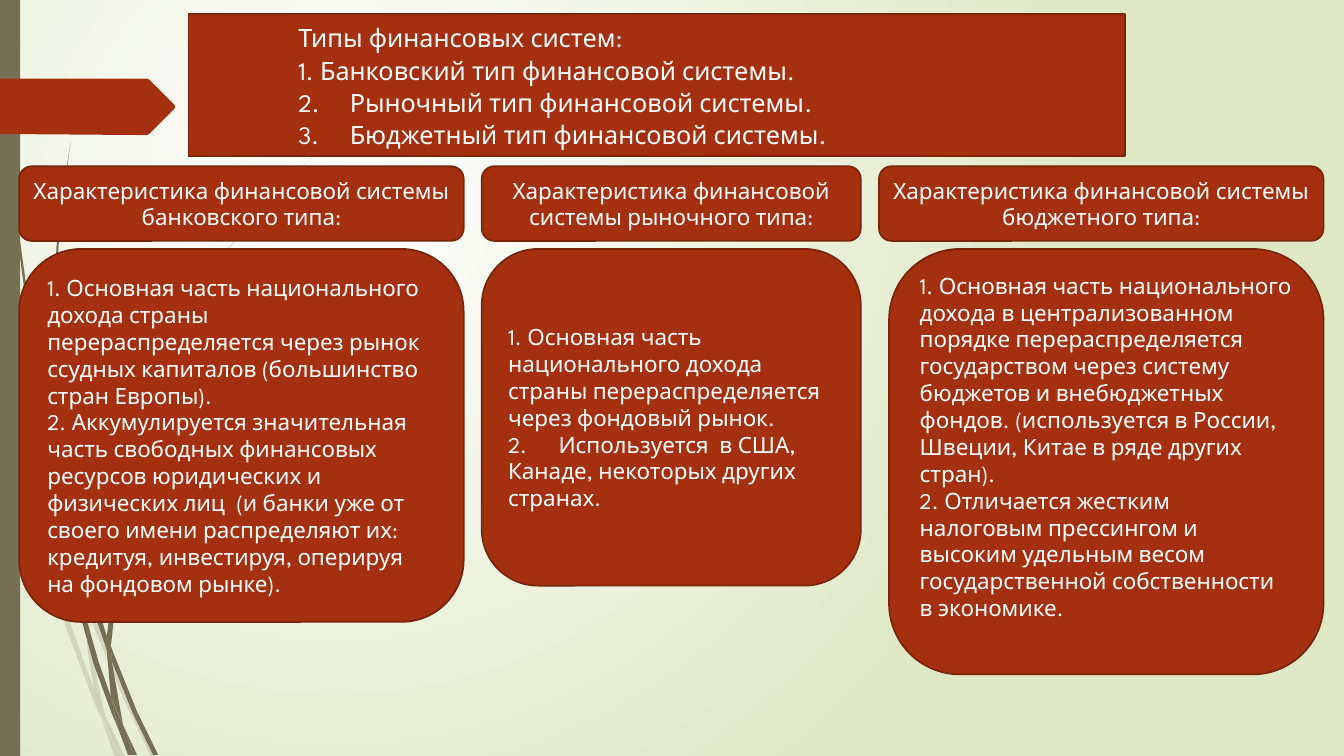
"""Build a slide that compares three types of financial system."""
from dataclasses import dataclass

from lxml import etree
from pptx import Presentation
from pptx.dml.color import RGBColor
from pptx.enum.shapes import MSO_SHAPE
from pptx.enum.text import MSO_ANCHOR, MSO_AUTO_SIZE, PP_ALIGN
from pptx.oxml import parse_xml
from pptx.oxml.ns import nsdecls, qn
from pptx.util import Pt

ROUNDED, RECTANGLE = MSO_SHAPE.ROUNDED_RECTANGLE, MSO_SHAPE.RECTANGLE
LEFT, CENTER, JUSTIFY = PP_ALIGN.LEFT, PP_ALIGN.CENTER, PP_ALIGN.JUSTIFY
MIDDLE, NO_FIT = MSO_ANCHOR.MIDDLE, MSO_AUTO_SIZE.NONE

TITLE = [
    "Типы финансовых систем:",
    "1. Банковский тип финансовой системы.",
    "2.\tРыночный тип финансовой системы.",
    "3.\tБюджетный тип финансовой системы.",
]
COLUMNS = [
    dict(
        left=13.68, width=317.52, body_width=317.52, body_height=266.4, spare=0,
        head="Характеристика финансовой системы банковского типа:",
        body=[
            "1. Основная часть национального дохода страны перераспределяется через рынок "
            "ссудных капиталов (большинство стран Европы).",
            "2. Аккумулируется значительная часть свободных финансовых ресурсов юридических и "
            "физических лиц  (и банки уже от своего имени распределяют их: кредитуя, "
            "инвестируя, оперируя на фондовом рынке).",
        ],
    ),
    dict(
        left=344.16, width=270.72, body_width=270.72, body_height=240.48, spare=0,
        head="Характеристика финансовой системы рыночного типа:",
        body=[
            "1. Основная часть национального дохода страны перераспределяется через "
            "фондовый рынок.",
            "2.\tИспользуется  в США, Канаде, некоторых других странах.",
        ],
    ),
    dict(
        left=627.84, width=317.52, body_width=310.32, body_height=303.84, spare=21.6,
        head="Характеристика финансовой системы бюджетного типа:",
        body=[
            "1. Основная часть национального дохода в централизованном порядке "
            "перераспределяется государством через систему бюджетов и внебюджетных фондов. "
            "(используется в России, Швеции, Китае в ряде других стран).",
            "2. Отличается жестким налоговым прессингом и высоким удельным весом "
            "государственной собственности в экономике.",
        ],
    ),
]

GRID = 0.72
PALE_STEMS = [
    [(11, 350), (9, 322), (0, 282), (0, 299), (10, 344)],
    [(58, 522), (84, 599), (85, 586), (62, 520), (36, 434), (14, 345), (17, 376), (36, 450)],
    [(92, 607), (88, 596), (88, 610), (123, 694), (150, 751), (155, 751), (127, 692)],
    [(119, 751), (124, 751), (105, 711)],
    [(93, 683), (70, 619), (48, 546), (31, 469), (17, 376), (11, 350), (28, 470), (44, 546),
     (65, 621), (92, 693), (101, 714), (99, 707)],
    [(84, 599), (87, 646), (93, 683), (96, 692), (105, 711), (103, 706), (91, 646), (88, 610)],
    [(88, 584), (97, 510), (110, 462), (133, 404), (160, 349), (193, 295), (229, 245),
     (268, 198), (312, 154), (312, 153), (268, 197), (228, 244), (191, 294), (158, 348),
     (130, 403), (107, 461), (93, 510), (85, 584), (88, 596)],
    [(101, 714), (114, 751), (119, 751)],
    [(96, 692), (93, 683), (99, 707), (119, 751), (105, 711)],
]
DARK_STEMS = [
    [(7, 110), (17, 233), (33, 355), (56, 477), (57, 481), (55, 453), (36, 355), (19, 232),
     (8, 109), (5, 48), (4, 0), (3, 0), (4, 48)],
    [(88, 592), (106, 645), (106, 631), (93, 590), (75, 532), (60, 472), (64, 505)],
    [(113, 649), (110, 641), (111, 656), (132, 708), (152, 749), (157, 749), (136, 706)],
    [(110, 691), (98, 657), (84, 608), (72, 556), (64, 505), (57, 477), (68, 557), (79, 608),
     (93, 659), (111, 708), (117, 722)],
    [(60, 472), (58, 453), (54, 349), (58, 245), (63, 193), (70, 141), (62, 193), (56, 245),
     (52, 349), (55, 449)],
    [(133, 749), (136, 749), (122, 719)],
    [(111, 633), (115, 592), (125, 552), (140, 513), (158, 476), (180, 440), (205, 406),
     (231, 374), (261, 344), (260, 344), (231, 373), (204, 405), (178, 439), (156, 474),
     (137, 512), (122, 551), (111, 591), (106, 631), (110, 641)],
    [(117, 722), (127, 749), (131, 749)],
    [(106, 645), (110, 691), (122, 719), (111, 656)],
    [(106, 645), (111, 656), (110, 641), (106, 631)],
    [(116, 706), (110, 691), (117, 722), (130, 749), (133, 749), (122, 719)],
]
POINTER = [(0, 78), (146, 78), (148, 79), (173, 104), (174, 106), (173, 108), (148, 133),
           (146, 134), (136, 134), (0, 133)]


@dataclass(frozen=True)
class Theme:
    """Colours, font and type sizes of the slide."""
    rust: str = "A53010"
    edge: str = "7A240C"
    olive: str = "766F54"
    white: str = "FFFFFF"
    lime: str = "DFE8C4"
    font: str = "League Spartan"
    title_size: int = 18
    text_size: int = 16
    edge_width: float = 1.25


THEME = Theme()


def paint(shape, colour, edge=None, opacity=None):
    """Give a shape its fill, outline and opacity."""
    shape.fill.solid()
    shape.fill.fore_color.rgb = RGBColor.from_string(colour)
    if edge:
        shape.line.color.rgb = RGBColor.from_string(edge)
        shape.line.width = Pt(THEME.edge_width)
    else:
        shape.line.fill.background()
    if opacity:
        tint = shape.fill._xPr.find(qn("a:solidFill"))[0]
        etree.SubElement(tint, qn("a:alpha")).set("val", str(opacity * 1000))


def write(box, lines, size=THEME.text_size, align=LEFT, tab=36, margin=0, indent=0,
          spacing=1.0, spare=0):
    """Fill a box with paragraphs in one format."""
    frame = box.text_frame
    frame.word_wrap, frame.auto_size, frame.vertical_anchor = True, NO_FIT, MIDDLE
    frame.margin_bottom = Pt(3.6 + spare)
    for number, line in enumerate(lines):
        para = frame.add_paragraph() if number else frame.paragraphs[0]
        para.alignment, para.line_spacing = align, spacing
        para.space_before = para.space_after = Pt(0)
        settings = para._p.get_or_add_pPr()
        settings.set("marL", str(Pt(margin)))
        settings.set("indent", str(Pt(indent)))
        if "\t" in line:
            stops = etree.SubElement(settings, qn("a:tabLst"))
            etree.SubElement(stops, qn("a:tab"), pos=str(Pt(tab)), algn="l")
        span = para.add_run()
        span.text = line
        span.font.size, span.font.name, span.font.bold = Pt(size), THEME.font, False
        span.font.color.rgb = RGBColor.from_string(THEME.white)


def add_box(page, kind, left, top, width, height, colour=THEME.rust, edge=THEME.edge):
    """Add a painted preset shape."""
    box = page.shapes.add_shape(kind, Pt(left), Pt(top), Pt(width), Pt(height))
    box.shadow.inherit = False
    paint(box, colour, edge)
    return box


def add_outline(page, points, colour, opacity=None):
    """Add a closed outline through points on the drawing grid."""
    builder = page.shapes.build_freeform(*points[0], scale=Pt(GRID))
    builder.add_line_segments(points[1:], close=True)
    outline = builder.convert_to_shape()
    outline.shadow.inherit = False
    paint(outline, colour, opacity=opacity)


def add_background(page):
    """Lay a radial gradient behind the page."""
    page.background.fill.solid()
    holder = page._element.cSld.find(qn("p:bg"))[0]
    stops = "".join(f'<a:gs pos="{place}"><a:srgbClr val="{colour}"/></a:gs>'
                    for place, colour in ((0, THEME.white), (100000, THEME.lime)))
    holder.replace(holder[0], parse_xml(
        f'<a:gradFill {nsdecls("a")} rotWithShape="1"><a:gsLst>{stops}</a:gsLst>'
        '<a:path path="circle"><a:fillToRect l="50000" t="50000" r="100000" b="100000"/>'
        '</a:path></a:gradFill>'))


def add_title(page):
    """Shape the title placeholder and bring it forward."""
    title = page.shapes.title
    title.left, title.top, title.width, title.height = map(Pt, (134.64, 10.08, 668.88, 101.52))
    title._element.spPr.append(parse_xml(
        f'<a:prstGeom {nsdecls("a")} prst="round2DiagRect"><a:avLst/></a:prstGeom>'))
    paint(title, THEME.rust, THEME.edge)
    write(title, TITLE, size=THEME.title_size, align=JUSTIFY, tab=108, margin=36,
          indent=35.28, spacing=1.07)
    page.shapes._spTree.append(title._element)


def main():
    """Assemble and save the deck."""
    deck = Presentation()
    deck.slide_width, deck.slide_height = Pt(960), Pt(540)
    page = deck.slides.add_slide(deck.slide_layouts[5])
    add_background(page)
    for stems, opacity in ((PALE_STEMS, 20), (DARK_STEMS, None)):
        for points in stems:
            add_outline(page, points, THEME.olive, opacity)
    add_box(page, RECTANGLE, 0, 0, 14.4, 540, THEME.olive, None)
    add_outline(page, POINTER, THEME.rust)
    add_title(page)
    for column in COLUMNS:
        left, width, body_width = column["left"], column["width"], column["body_width"]
        head = add_box(page, ROUNDED, left, 118.8, width, 53.28)
        write(head, [column["head"]], align=CENTER)
        body = add_box(page, ROUNDED, left + width - body_width, 177.84, body_width,
                       column["body_height"])
        write(body, column["body"], spare=column["spare"])
    deck.save("out.pptx")


if __name__ == "__main__":
    main()
